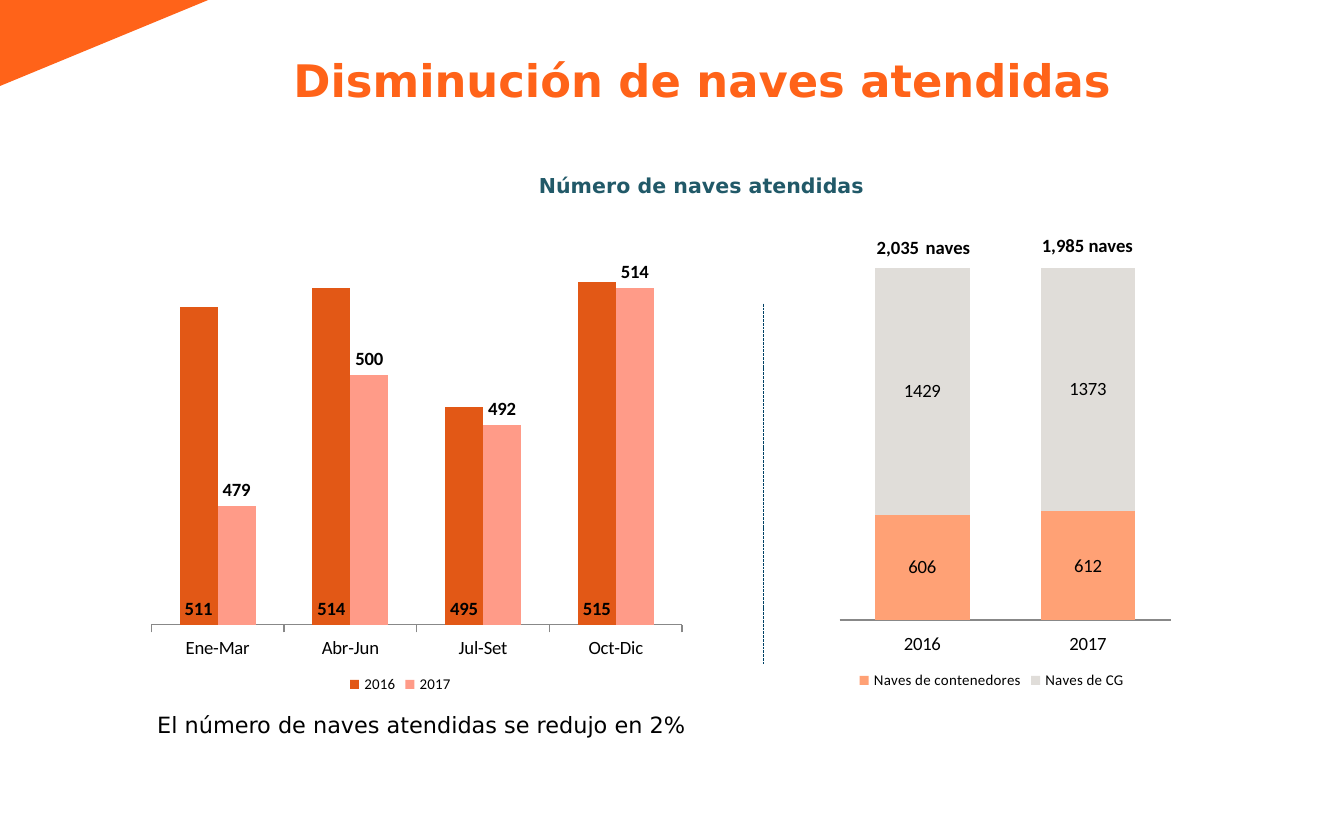
from collections import namedtuple

from lxml.etree import SubElement
from pptx import Presentation
from pptx.chart.data import CategoryChartData
from pptx.dml.color import RGBColor
from pptx.enum.chart import XL_CHART_TYPE as ChartType
from pptx.enum.chart import XL_LABEL_POSITION as LabelPosition
from pptx.enum.chart import XL_LEGEND_POSITION as LegendPosition
from pptx.enum.chart import XL_TICK_LABEL_POSITION as TickLabels
from pptx.enum.chart import XL_TICK_MARK as TickMark
from pptx.enum.dml import MSO_LINE
from pptx.enum.shapes import MSO_CONNECTOR, MSO_SHAPE
from pptx.enum.text import MSO_ANCHOR, MSO_AUTO_SIZE, PP_ALIGN
from pptx.oxml import parse_xml
from pptx.oxml.ns import nsdecls, qn
from pptx.util import Inches, Pt

Box = namedtuple("Box", "left top width height")
Series = namedtuple("Series", "name values color label_position bold")

COLUMNS, ROWS = 100, 62.5
UNIT = Inches(0.1)
SANS, CHART_FONT = "DejaVu Sans", "Calibri"
ORANGE = RGBColor(0xFF, 0x63, 0x19)
TEAL = RGBColor(0x21, 0x59, 0x68)
NAVY = RGBColor(0x00, 0x41, 0x65)
BLACK = RGBColor(0x00, 0x00, 0x00)
GREY = RGBColor(0x88, 0x88, 0x88)
RUST = RGBColor(0xE2, 0x58, 0x16)
SALMON = RGBColor(0xFF, 0x9B, 0x88)
PEACH = RGBColor(0xFF, 0xA1, 0x75)
STONE = RGBColor(0xE0, 0xDD, 0xD9)


def grid(*cells):
    """Convert grid units to slide lengths."""
    return [round(cell * UNIT) for cell in cells]


def style_font(font, size, color=BLACK, bold=False, name=CHART_FONT):
    """Set the main properties of a font."""
    font.name, font.size, font.bold = name, Pt(size), bold
    font.color.rgb = color


def place_text(shape, box, runs, align=PP_ALIGN.CENTER, anchor=MSO_ANCHOR.TOP):
    """Move a text shape to its box and fill one paragraph with styled runs."""
    shape.left, shape.top, shape.width, shape.height = grid(*box)
    frame = shape.text_frame
    frame.word_wrap = True
    frame.auto_size = MSO_AUTO_SIZE.NONE
    frame.vertical_anchor = anchor
    para = frame.paragraphs[0]
    para.alignment = align
    for text, style in runs:
        span = para.add_run()
        span.text = text
        style_font(span.font, **style)


def add_text(page, box, runs, **layout):
    """Add a text box and return it."""
    shape = page.shapes.add_textbox(*grid(*box))
    place_text(shape, box, runs, **layout)
    return shape


def add_corner(page, box):
    """Fill the corner box with a right triangle turned a quarter."""
    left = box.left + (box.width - box.height) / 2
    top = box.top + (box.height - box.width) / 2
    corner = page.shapes.add_shape(
        MSO_SHAPE.RIGHT_TRIANGLE, *grid(left, top, box.height, box.width))
    corner.rotation = 90
    corner.shadow.inherit = False
    corner.fill.solid()
    corner.fill.fore_color.rgb = ORANGE
    corner.line.fill.background()


def set_plot_area(chart, shares):
    """Fix the inner plot area as shares of the chart's size."""
    area = chart._chartSpace.chart.plotArea
    for layout in area.findall(qn("c:layout")):
        area.remove(layout)
    places = "".join(f'<c:{tag} val="{share}"/>' for tag, share in zip("xywh", shares))
    area.insert(0, parse_xml(
        f'<c:layout {nsdecls("c")}><c:manualLayout><c:layoutTarget val="inner"/>'
        f'<c:xMode val="edge"/><c:yMode val="edge"/>{places}'
        "</c:manualLayout></c:layout>"))


def add_columns(page, box, kind, categories, series_list, plot_area, gap, tick, limits):
    """Add a column chart with value labels and a legend below."""
    data = CategoryChartData()
    data.categories = categories
    for series in series_list:
        data.add_series(series.name, series.values)
    chart = page.shapes.add_chart(kind, *grid(*box), data).chart
    chart.has_title = False
    style_font(chart.font, 10)
    set_plot_area(chart, plot_area)

    chart.has_legend = True
    chart.legend.position = LegendPosition.BOTTOM
    chart.legend.include_in_layout = False
    style_font(chart.legend.font, 8)

    axis = chart.category_axis
    axis.major_tick_mark, axis.minor_tick_mark = tick, TickMark.NONE
    axis.tick_label_position = TickLabels.LOW
    axis.format.line.color.rgb = GREY
    axis.format.line.width = Pt(0.75)
    style_font(axis.tick_labels.font, 10)
    values = chart.value_axis
    values.minimum_scale, values.maximum_scale = limits
    values.has_major_gridlines = False
    values.visible = False

    plot = chart.plots[0]
    plot.gap_width = gap
    plot.overlap = 100 if kind == ChartType.COLUMN_STACKED_100 else 0
    plot.vary_by_categories = False
    for drawn, series in zip(plot.series, series_list):
        drawn.format.fill.solid()
        drawn.format.fill.fore_color.rgb = series.color
        labels = drawn.data_labels
        labels.show_value = True
        labels.position = series.label_position
        style_font(labels.font, 10, bold=series.bold)


def add_quarters(page, box):
    """Compare the quarters of both years."""
    add_columns(
        page, box, ChartType.COLUMN_CLUSTERED,
        ["Ene-Mar", "Abr-Jun", "Jul-Set", "Oct-Dic"],
        [Series("2016", (511, 514, 495, 515), RUST, LabelPosition.INSIDE_BASE, True),
         Series("2017", (479, 500, 492, 514), SALMON, LabelPosition.OUTSIDE_END, True)],
        (0.086, 0.154, 0.882, 0.706), 150, TickMark.OUTSIDE, (460, 520))


def add_ship_types(page, box):
    """Show the mix of ships in each year with the totals above."""
    add_columns(
        page, box, ChartType.COLUMN_STACKED_100, ["2016", "2017"],
        [Series("Naves de contenedores", (606, 612), PEACH, LabelPosition.CENTER, False),
         Series("Naves de CG", (1429, 1373), STONE, LabelPosition.CENTER, False)],
        (0.098, 0.102, 0.874, 0.741), 75, TickMark.NONE, (0, 1))
    bold = dict(size=10, bold=True)
    totals = [
        [("2,035", bold), (" ", dict(size=11, name=SANS)), ("naves", bold)],
        [("1,985 naves", bold)],
    ]
    for index, runs in enumerate(totals):
        left = box.left + 3.1 + 12.2 * index
        add_text(page, Box(left, box.top + 0.6, 11.8, 3), runs)


def add_divider(page, box):
    """Draw the dashed line between the charts."""
    ends = grid(box.left, box.top, box.left + box.width, box.top + box.height)
    divider = page.shapes.add_connector(MSO_CONNECTOR.STRAIGHT, *ends)
    divider.line.color.rgb = NAVY
    divider.line.width = Pt(0.5)
    divider.line.dash_style = MSO_LINE.SQUARE_DOT
    SubElement(divider._element.spPr, qn("a:effectLst"))


def add_caption(page, box):
    """Write the conclusion below the charts."""
    caption = add_text(
        page, box,
        [("El número de naves atendidas se redujo en 2%", dict(size=12, name=SANS))],
        align=PP_ALIGN.LEFT, anchor=MSO_ANCHOR.BOTTOM)
    frame = caption.text_frame
    frame.margin_left = frame.margin_right = frame.margin_top = frame.margin_bottom = 0
    frame.paragraphs[0].line_spacing = 0.9


def main():
    """Build and save the deck."""
    deck = Presentation()
    deck.slide_width, deck.slide_height = grid(COLUMNS, ROWS)
    page = deck.slides.add_slide(deck.slide_layouts[5])
    add_corner(page, Box(0, 0, 15.5, 6.4))
    place_text(page.shapes.title, Box(11.7, 3.4, 81.1, 5),
               [("Disminución de naves atendidas",
                 dict(size=24, color=ORANGE, bold=True, name=SANS))])
    add_text(page, Box(17, 12.4, 70.4, 3.1),
             [("Número de naves atendidas",
               dict(size=11, color=TEAL, bold=True, name=SANS))])
    add_quarters(page, Box(7.4, 12.6, 44.8, 39.4))
    add_ship_types(page, Box(59.7, 16.3, 28.2, 35.4))
    add_divider(page, Box(56.8, 22.6, 0, 26.8))
    add_caption(page, Box(11.7, 52.8, 78.4, 2.1))
    deck.save("out.pptx")


if __name__ == "__main__":
    main()
